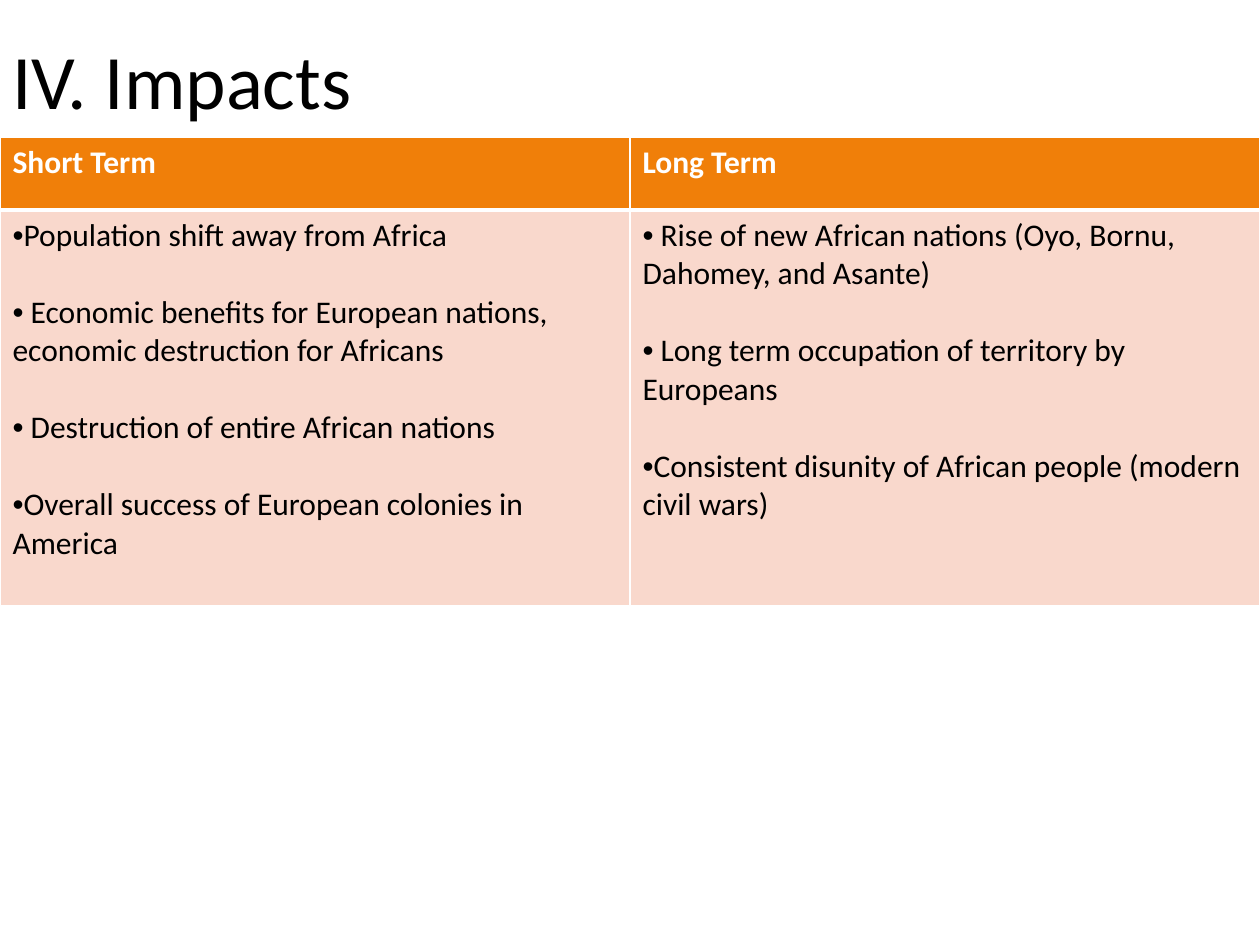
"""Build the "IV. Impacts" slide: a title over a short-term and long-term table."""
from lxml.etree import SubElement
from pptx import Presentation
from pptx.dml.color import RGBColor
from pptx.enum.text import MSO_ANCHOR, PP_ALIGN
from pptx.oxml.ns import qn
from pptx.util import Pt

PX = 914400 / 126
COLORS = {"text": "000000", "white": "FFFFFF", "header": "F07F09", "body": "F9D8CC"}
COLUMNS = [
    ("Short Term", [
        "Population shift away from Africa",
        " Economic benefits for European nations, economic destruction for Africans",
        " Destruction of entire African nations",
        "Overall success of European colonies in America",
    ]),
    ("Long Term", [
        " Rise of new African nations (Oyo, Bornu, Dahomey, and Asante)",
        " Long term occupation of territory by Europeans",
        "Consistent disunity of African people (modern civil wars)",
    ]),
]


def px(n):
    return round(n * PX)


def write(p, text, size=18, color="text", bold=False, bullet=False, before=0):
    if bullet:
        pPr = p._p.get_or_add_pPr()
        pPr.set("marL", "0")
        pPr.set("indent", "0")
        SubElement(pPr, qn("a:buFont"), typeface="Arial")
        SubElement(pPr, qn("a:buChar"), char="•")
    p.alignment = PP_ALIGN.LEFT
    p.space_before = Pt(before)
    r = p.add_run()
    r.text = text
    r.font.name = "Calibri"
    r.font.size = Pt(size)
    r.font.bold = bold
    r.font.color.rgb = RGBColor.from_string(COLORS[color])


prs = Presentation()
prs.slide_width, prs.slide_height = px(1260), px(945)
s = prs.slides.add_slide(prs.slide_layouts[5])

title = s.shapes.title
title.left, title.top, title.width, title.height = px(0), px(0), px(1134), px(158)
title.text_frame.vertical_anchor = MSO_ANCHOR.MIDDLE
write(title.text_frame.paragraphs[0], "IV. Impacts", size=44)

table = s.shapes.add_table(2, 2, px(0), px(137), px(1260), px(469)).table
for row, height in zip(table.rows, (73, 396)):
    row.height = px(height)

for col, (heading, points) in enumerate(COLUMNS):
    table.columns[col].width = px(630)
    head, body = table.cell(0, col), table.cell(1, col)
    write(head.text_frame.paragraphs[0], heading, color="white", bold=True)
    tf = body.text_frame
    for i, point in enumerate(points):
        p = tf.add_paragraph() if i else tf.paragraphs[0]
        write(p, point, bullet=True, before=22 if i else 0)

    for cell, fill, thick in ((head, "header", "lnB"), (body, "body", "lnT")):
        tcPr = cell._tc.get_or_add_tcPr()
        for side in ("lnL", "lnR", "lnT", "lnB"):
            ln = SubElement(tcPr, qn(f"a:{side}"), w=str(Pt(3 if side == thick else 1)))
            line_fill = SubElement(ln, qn("a:solidFill"))
            SubElement(line_fill, qn("a:srgbClr"), val=COLORS["white"])
        cell.fill.solid()
        cell.fill.fore_color.rgb = RGBColor.from_string(COLORS[fill])

prs.save("out.pptx")
